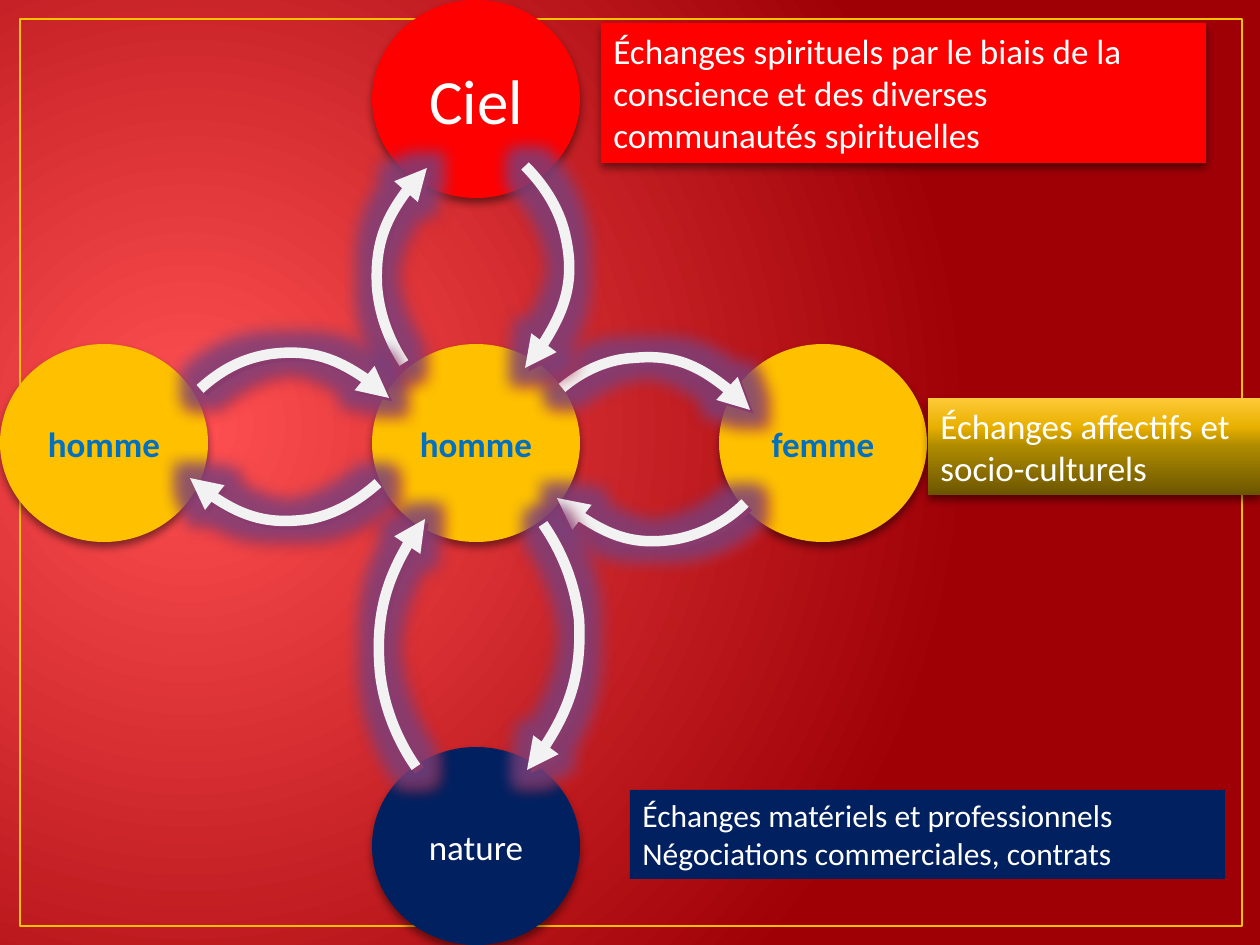
from copy import deepcopy
from math import cos, radians, sin

from lxml import etree
from pptx import Presentation
from pptx.dml.color import RGBColor
from pptx.enum.shapes import MSO_SHAPE
from pptx.enum.text import MSO_ANCHOR, PP_ALIGN
from pptx.oxml import parse_xml
from pptx.oxml.ns import nsdecls, qn
from pptx.util import Emu, Pt

OVAL, RECT = MSO_SHAPE.OVAL, MSO_SHAPE.RECTANGLE
TOP, MIDDLE = MSO_ANCHOR.TOP, MSO_ANCHOR.MIDDLE
LEFT, CENTER = PP_ALIGN.LEFT, PP_ALIGN.CENTER
SCALE = 914400 / 126
FONT = "Calibri"
WHITE, BLUE, NAVY = "FFFFFF", "0070C0", "002060"
RED, GOLD = "FF0000", "FFC000"
WIDE, HIGH = 208, 198

GLOW = [(0, "FF5052"), (100, "9E0006")]
FOCUS = '<a:path path="circle"><a:fillToRect l="15000" t="50000" r="85000" b="60000"/></a:path>'
BRASS = [(0, "6C5500"), (50, "AE8A00"), (70, "E8B000"), (100, "FFCA39")]
UPWARD = '<a:lin ang="16200000" scaled="0"/>'

DISCS = [
    (372, 0, RED, "Ciel", 36, WHITE, False),
    (372, 344, GOLD, "homme", 20, BLUE, True),
    (0, 344, GOLD, "homme", 20, BLUE, True),
    (719, 344, GOLD, "femme", 20, BLUE, True),
    (372, 747, NAVY, "nature", 20, WHITE, False),
]
ARROWS = [
    (357.2, (572, 276), [(404, 363), (388, 339), (379, 312), (377, 286),
                         (375, 243), (393, 200), (427, 168)]),
    (85.4, (651, 572), [(562, 388), (583, 370), (609, 359), (634, 358),
                        (675, 354), (716, 373), (750, 410)]),
    (353.8, (591, 649), [(416, 767), (397, 740), (384, 707), (380, 673),
                         (375, 617), (391, 562), (425, 519)]),
    (260.3, (640, 326), [(745, 503), (726, 522), (702, 534), (677, 539),
                         (635, 546), (592, 530), (557, 498)]),
    (81.9, (301, 568), [(200, 389), (222, 369), (244, 358), (271, 354),
                        (311, 349), (354, 364), (389, 398)]),
    (260.3, (273, 306), [(378, 483), (358, 501), (335, 514), (310, 519),
                         (268, 525), (226, 512), (190, 478)]),
    (174.8, (352, 639), [(543, 524), (563, 553), (575, 585), (579, 619),
                         (582, 673), (564, 727), (527, 770)]),
    (169.3, (343, 282), [(525, 166), (547, 188), (561, 213), (566, 239),
                         (575, 282), (559, 329), (525, 368)]),
]


def px(num):
    """Turn pixels into EMU."""
    return Emu(round(num * SCALE))


def rgb(code):
    """Turn a hex string into a colour."""
    return RGBColor.from_string(code)


def blend(root, stops, way):
    """Swap the first solid fill under root for a gradient."""
    marks = "".join(
        f'<a:gs pos="{pos * 1000}"><a:srgbClr val="{code}"/></a:gs>' for pos, code in stops
    )
    old = root.find(".//" + qn("a:solidFill"))
    new = parse_xml(
        f'<a:gradFill {nsdecls("a")} rotWithShape="1"><a:gsLst>{marks}</a:gsLst>{way}</a:gradFill>'
    )
    old.getparent().replace(old, new)


def effect(shape, kind, code, alpha, **sizes):
    """Add a glow or shadow to a shape's effect list."""
    host = shape._element.spPr.find(qn("a:effectLst"))
    item = etree.SubElement(host, qn("a:" + kind), {k: str(v) for k, v in sizes.items()})
    tint = etree.SubElement(item, qn("a:srgbClr"), val=code)
    etree.SubElement(tint, qn("a:alpha"), val=str(alpha * 1000))


def block(slide, kind, spot, fill, shade=True):
    """Draw a filled shape without outline."""
    shape = slide.shapes.add_shape(kind, *map(px, spot))
    shape.shadow.inherit = False
    shape.fill.solid()
    shape.fill.fore_color.rgb = rgb(fill)
    shape.line.fill.background()
    if shade:
        effect(shape, "outerShdw", "000000", 45, blurRad=Pt(5), dist=Pt(3), dir=5400000)
    return shape


def write(shape, lines, size, code, bold=False, align=LEFT, anchor=TOP):
    """Write one paragraph per line into a shape."""
    frame = shape.text_frame
    frame.word_wrap = True
    frame.vertical_anchor = anchor
    for num, line in enumerate(lines):
        para = frame.add_paragraph() if num else frame.paragraphs[0]
        para.alignment = align
        run = para.add_run()
        run.text = line
        run.font.name = FONT
        run.font.size = Pt(size)
        run.font.bold = bold
        run.font.color.rgb = rgb(code)


def border(slide):
    """Draw the thin frame round the slide."""
    shape = slide.shapes.add_shape(RECT, *map(px, (20, 19, 1222, 907)))
    shape.shadow.inherit = False
    shape.fill.background()
    shape.line.color.rgb = rgb("F5C201")
    shape.line.width = Pt(1.5)


def disc(slide, x, y, fill, word, size, code, bold):
    """Draw a labelled disc."""
    shape = block(slide, OVAL, (x, y, WIDE, HIGH), fill)
    write(shape, [word], size, code, bold, CENTER, MIDDLE)


def turn(spot, hub, angle):
    """Turn a point clockwise about a hub."""
    dx, dy = spot[0] - hub[0], spot[1] - hub[1]
    c, s = cos(radians(angle)), sin(radians(angle))
    return round(hub[0] + dx * c - dy * s), round(hub[1] + dx * s + dy * c)


def bend(track):
    """Turn each three line steps of a track into one Bezier span."""
    steps = track.findall(qn("a:lnTo"))
    for first in range(0, 6, 3):
        curve = etree.Element(qn("a:cubicBezTo"))
        steps[first].addprevious(curve)
        for step in steps[first:first + 3]:
            curve.append(step[0])
            track.remove(step)


def sector(slide, angle, hub, points):
    """Draw a turned sector whose outline shows on its arc only."""
    pivot = tuple(map(px, hub))
    spots = [turn((px(x), px(y)), pivot, -angle) for x, y in points]
    pen = slide.shapes.build_freeform(*spots[0])
    pen.add_line_segments(spots[1:] + [pivot], close=False)
    shape = pen.convert_to_shape()
    half = shape.width // 2, shape.height // 2
    mid = turn((shape.left + half[0], shape.top + half[1]), pivot, angle)
    shape.left, shape.top = mid[0] - half[0], mid[1] - half[1]
    shape.rotation = angle
    arc = next(shape._element.iter(qn("a:path")))
    bend(arc)
    wedge = deepcopy(arc)
    arc.addnext(wedge)
    arc.remove(arc[-1])
    arc.set("fill", "none")
    wedge.set("stroke", "0")
    etree.SubElement(wedge, qn("a:close"))
    return shape


def arrow(slide, angle, hub, points):
    """Draw a glowing curved arrow."""
    shape = sector(slide, angle, hub, points)
    shape.fill.background()
    shape.line.color.rgb = rgb("F2F2F2")
    shape.line.width = Pt(6)
    etree.SubElement(shape.line._get_or_add_ln(), qn("a:tailEnd"), type="triangle")
    shape.shadow.inherit = False
    effect(shape, "glow", "5A4A9A", 60, rad=Pt(18))
    effect(shape, "outerShdw", "D1282E", 100, blurRad=0, dist=Pt(2.8), dir=2700000)


def main():
    """Build the slide and save it."""
    deck = Presentation()
    deck.slide_width, deck.slide_height = px(1260), px(945)
    slide = deck.slides.add_slide(deck.slide_layouts[6])
    slide.background.fill.solid()
    slide.background.fill.fore_color.rgb = rgb(RED)
    blend(slide._element, GLOW, FOCUS)
    border(slide)
    for item in DISCS:
        disc(slide, *item)
    sky = block(slide, RECT, (601, 23, 605, 140), RED)
    write(sky, ["Échanges spirituels par le biais de la conscience et des diverses "
                "communautés spirituelles"], 20, WHITE)
    bond = block(slide, RECT, (928, 398, 332, 97), GOLD)
    blend(bond._element.spPr, BRASS, UPWARD)
    write(bond, ["Échanges affectifs et socio-culturels"], 20, WHITE)
    trade = block(slide, RECT, (630, 790, 595, 89), NAVY, shade=False)
    write(trade, ["Échanges matériels et professionnels",
                  "Négociations commerciales, contrats"], 18, WHITE)
    for item in ARROWS:
        arrow(slide, *item)
    deck.save("out.pptx")


if __name__ == "__main__":
    main()
